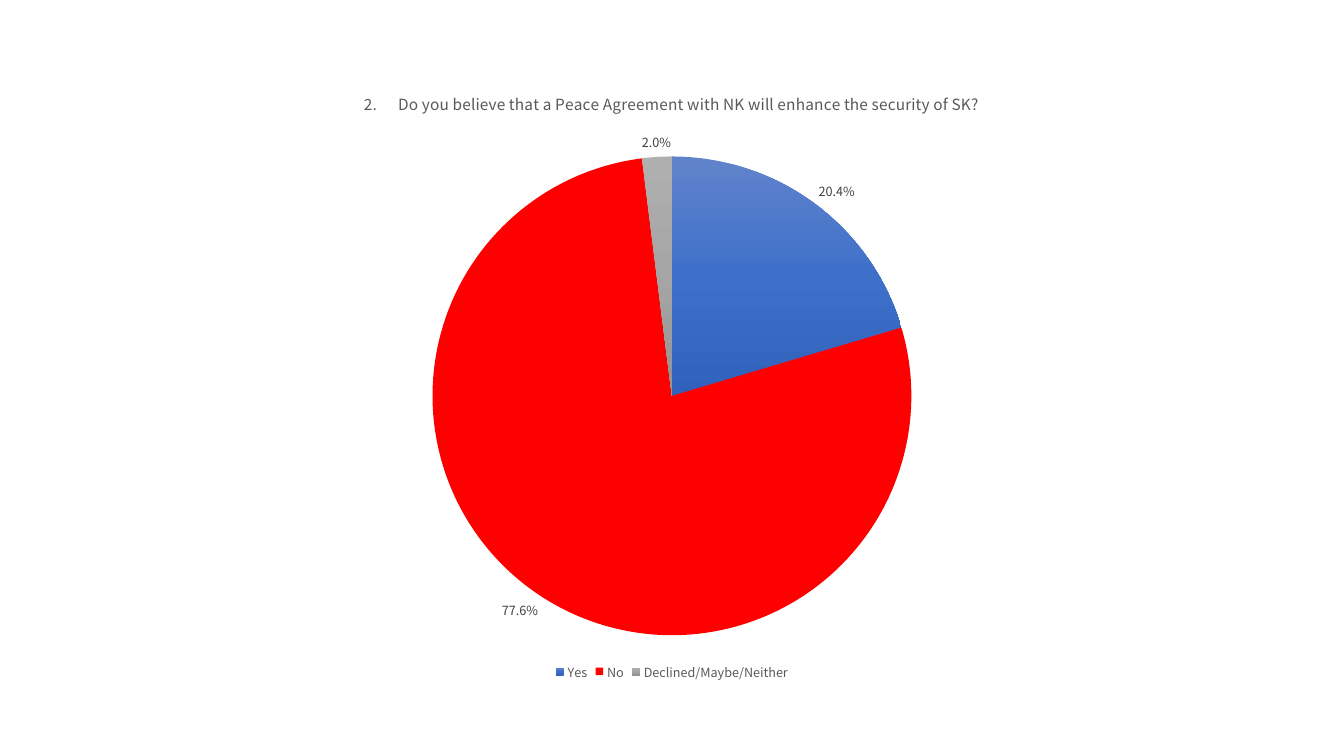
from copy import deepcopy

from lxml.etree import SubElement
from pptx import Presentation
from pptx.chart.data import CategoryChartData
from pptx.dml.color import RGBColor
from pptx.enum.chart import XL_CHART_TYPE, XL_LABEL_POSITION, XL_LEGEND_POSITION
from pptx.oxml.ns import qn
from pptx.util import Inches, Pt

COLORS = {
    "text": "595959",
    "label": "404040",
    "base": "000000",
    "yes": ("6183CB", "3E70CA", "3062BB"),
    "no": ("FF0000",),
    "neither": ("AFAFAF", "A5A5A5", "939393"),
}
QUESTION = "2.      Do you believe that a Peace Agreement with NK will enhance the security of SK?"
ANSWERS = [
    ("Yes", 0.204, "yes"),
    ("No", 0.776, "no"),
    ("Declined/Maybe/Neither", 0.02, "neither"),
]


class SurveySlide:
    font_name = "Noto Sans CJK KR"

    def __init__(self, presentation):
        self.width = presentation.slide_width
        self.height = presentation.slide_height
        self.slide = presentation.slides.add_slide(presentation.slide_layouts[6])

    def style_font(self, font, size, color):
        font.name = self.font_name
        font.size = Pt(size)
        font.bold = False
        font.color.rgb = RGBColor.from_string(COLORS[color])

    def fill_slice(self, point, shades):
        fill = point.format.fill
        if len(shades) == 1:
            fill.solid()
            fill.fore_color.rgb = RGBColor.from_string(shades[0])
        else:
            fill.gradient()
            fill.gradient_angle = 270
            first_stop = fill.gradient_stops[0]._gs
            first_stop.addnext(deepcopy(first_stop))
            for index, (stop, shade) in enumerate(zip(fill.gradient_stops, shades)):
                stop.position = index / (len(shades) - 1)
                stop.color.rgb = RGBColor.from_string(shade)
        point.format.line.fill.background()

    def place_plot(self, chart, left, top, width, height):
        plot_area = chart._chartSpace.chart.plotArea
        for layout in plot_area.findall(qn("c:layout")):
            plot_area.remove(layout)
        layout = SubElement(plot_area, qn("c:layout"))
        plot_area.insert(0, layout)
        manual = SubElement(layout, qn("c:manualLayout"))
        settings = {
            "layoutTarget": "inner", "xMode": "edge", "yMode": "edge",
            "x": left, "y": top, "w": width, "h": height,
        }
        for name, value in settings.items():
            SubElement(manual, qn(f"c:{name}")).set("val", str(value))

    def add_pie(self, title, answers, left, top, width, height):
        data = CategoryChartData(number_format="0.0%")
        data.categories = [name for name, _, _ in answers]
        data.add_series(title, [share for _, share, _ in answers])
        chart = self.slide.shapes.add_chart(
            XL_CHART_TYPE.PIE,
            int(left * self.width), int(top * self.height),
            int(width * self.width), int(height * self.height),
            data,
        ).chart
        self.style_font(chart.font, 10, "base")

        chart.has_title = True
        run = chart.chart_title.text_frame.paragraphs[0].add_run()
        run.text = title
        self.style_font(run.font, 11, "text")
        chart.chart_title.include_in_layout = False

        chart.has_legend = True
        chart.legend.position = XL_LEGEND_POSITION.BOTTOM
        chart.legend.include_in_layout = False
        self.style_font(chart.legend.font, 9, "text")

        plot = chart.plots[0]
        plot.vary_by_categories = True
        for index, (_, _, color) in enumerate(answers):
            self.fill_slice(plot.series[0].points[index], COLORS[color])

        labels = plot.series[0].data_labels
        labels.show_value = True
        labels.number_format = "0.0%"
        labels.number_format_is_linked = False
        labels.position = XL_LABEL_POSITION.OUTSIDE_END
        self.style_font(labels.font, 9, "label")
        return chart


def main():
    presentation = Presentation()
    presentation.slide_width = Inches(13.33)
    presentation.slide_height = Inches(7.5)
    survey = SurveySlide(presentation)
    margin = 0.7 / 13.33
    chart = survey.add_pie(QUESTION, ANSWERS, margin, 0.7 / 7.5, 1 - 2 * margin, 6.09 / 7.5)
    survey.place_plot(chart, 0.3, 0.14, 0.4, 0.78)
    presentation.save("out.pptx")


if __name__ == "__main__":
    main()
